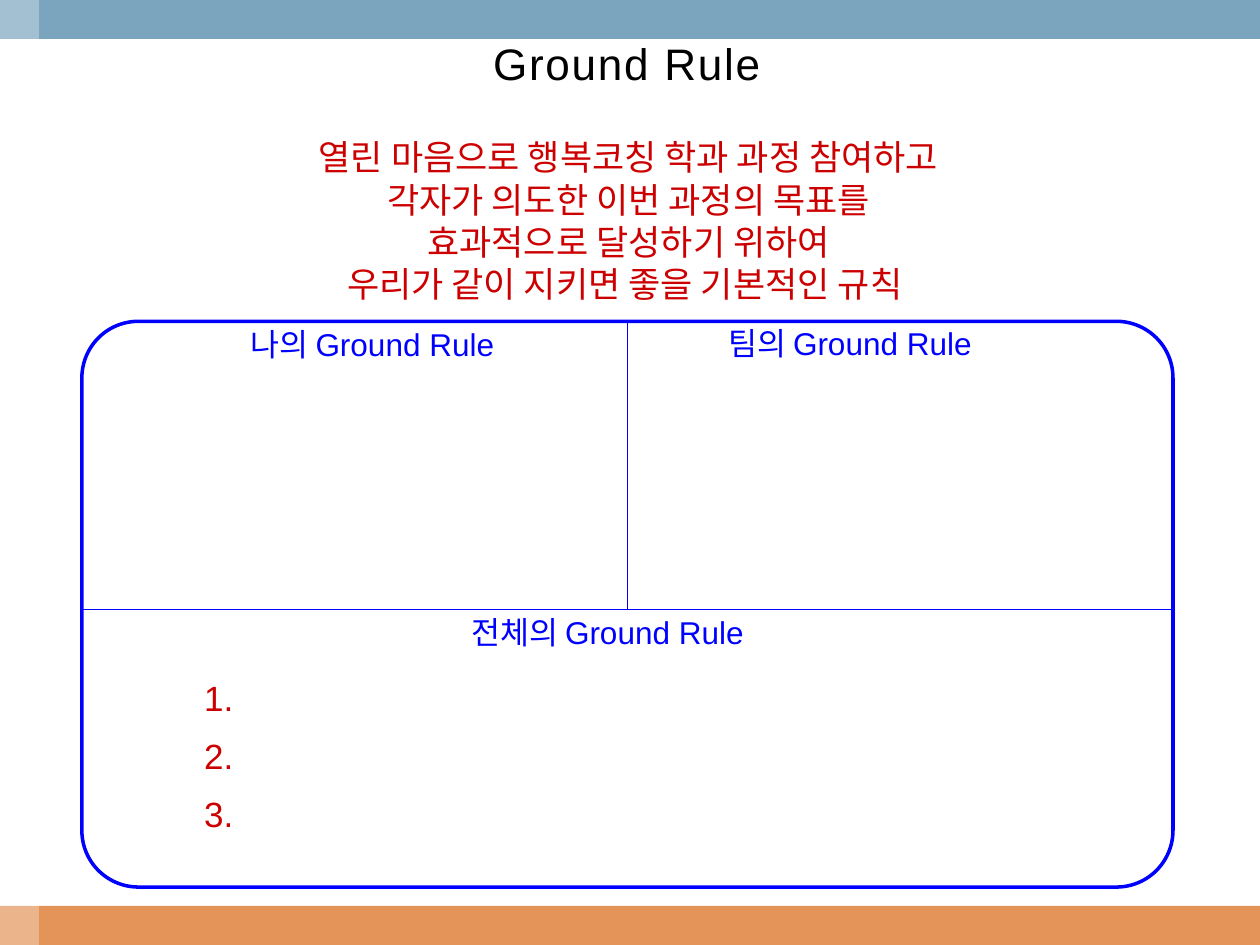
from lxml.etree import SubElement
from pptx import Presentation
from pptx.dml.color import RGBColor
from pptx.enum.shapes import MSO_CONNECTOR, MSO_SHAPE
from pptx.enum.text import MSO_ANCHOR, MSO_AUTO_SIZE, PP_ALIGN
from pptx.oxml.ns import qn
from pptx.util import Inches, Pt

BLACK = RGBColor(0x00, 0x00, 0x00)
WHITE = RGBColor(0xFF, 0xFF, 0xFF)
RED = RGBColor(0xCC, 0x00, 0x00)
BLUE = RGBColor(0x00, 0x00, 0xFF)
SKY = RGBColor(0x7B, 0xA5, 0xBE)
ORANGE = RGBColor(0xE4, 0x94, 0x58)
FONT = "Arial"


def write(frame, text, size=18, color=BLUE, align=PP_ALIGN.LEFT, before=0, tracking=None):
    """Write each line of text as one formatted paragraph."""
    for index, line in enumerate(text.split("\n")):
        para = frame.add_paragraph() if index else frame.paragraphs[0]
        para.alignment = align
        para.space_before = Pt(before)
        span = para.add_run()
        span.text = line
        span.font.name = FONT
        span.font.size = Pt(size)
        span.font.color.rgb = color
        if tracking:
            span.font._element.set("spc", str(tracking))


class Page:
    """The current slide and the style of its elements."""

    def __init__(self, deck):
        self.slide = deck.slides.add_slide(deck.slide_layouts[5])
        self.shapes = self.slide.shapes

    def title(self, text, left, top, width, height):
        box = self.shapes.title
        box.left, box.top = Inches(left), Inches(top)
        box.width, box.height = Inches(width), Inches(height)
        frame = box.text_frame
        frame.auto_size = MSO_AUTO_SIZE.NONE
        frame.vertical_anchor = MSO_ANCHOR.TOP
        frame.margin_top = Inches(0.08)
        write(frame, text, size=25.2, color=BLACK, align=PP_ALIGN.CENTER, tracking=100)

    def panel(self, left, top, width, height, fill, kind=MSO_SHAPE.RECTANGLE, line=None, alpha=None):
        box = self.shapes.add_shape(kind, Inches(left), Inches(top), Inches(width), Inches(height))
        box.shadow.inherit = False
        box.fill.solid()
        box.fill.fore_color.rgb = fill
        if alpha:
            color = box._element.spPr.find(".//" + qn("a:srgbClr"))
            SubElement(color, qn("a:alpha")).set("val", str(alpha * 1000))
        if line:
            box.line.color.rgb = line
            box.line.width = Pt(2)
        else:
            box.line.fill.background()
        return box

    def rule(self, x1, y1, x2, y2):
        line = self.shapes.add_connector(
            MSO_CONNECTOR.STRAIGHT, Inches(x1), Inches(y1), Inches(x2), Inches(y2))
        line.line.color.rgb = BLUE
        line.line.width = Pt(0.75)
        SubElement(line._element.spPr, qn("a:effectLst"))

    def text(self, text, left, top, width, height, wrap=False, **style):
        box = self.shapes.add_textbox(Inches(left), Inches(top), Inches(width), Inches(height))
        box.text_frame.word_wrap = wrap
        write(box.text_frame, text, **style)


def main():
    deck = Presentation()
    deck.slide_width, deck.slide_height = Inches(10), Inches(7.5)
    page = Page(deck)

    # Colour bands with a pale strip at the left
    band = 0.31
    page.panel(0, 7.5 - band, 10, band, ORANGE)
    page.panel(0, 0, 10, band, SKY)
    page.panel(0, 0, band, 7.5, WHITE, alpha=30)

    # Title and purpose
    page.title("Ground Rule", 2.79, 0.21, 4.37, 0.46)
    page.text("열린 마음으로 행복코칭 학과 과정 참여하고\n"
              "각자가 의도한 이번 과정의 목표를\n"
              "효과적으로 달성하기 위하여\n"
              "우리가 같이 지키면 좋을 기본적인 규칙 ",
              2.12, 1.03, 5.74, 1.45, size=20, color=RED, align=PP_ALIGN.CENTER)

    # Frame split into two upper fields and one lower field
    left, top, width, height = 0.65, 2.55, 8.66, 4.49
    middle, split = left + width / 2, 4.84
    frame = page.panel(left, top, width, height, WHITE, MSO_SHAPE.ROUNDED_RECTANGLE, line=BLUE)
    frame.adjustments[0] = 0.1
    page.rule(left, split, left + width, split)
    page.rule(middle, top, middle, split)

    # Field headings
    for owner, x, y, span in (("나의", 1.89, 2.53, 2.24),
                              ("팀의", 5.68, 2.52, 2.24),
                              ("전체의", 3.64, 4.82, 2.49)):
        page.text(f"{owner} Ground Rule", x, y, span, 0.4)

    # Numbers for the shared rules
    page.text("1. \n2. \n3. ", 1.38, 5.32, 0.79, 1.38, wrap=True,
              size=20, color=RED, align=PP_ALIGN.CENTER, before=9)

    deck.save("out.pptx")


if __name__ == "__main__":
    main()
